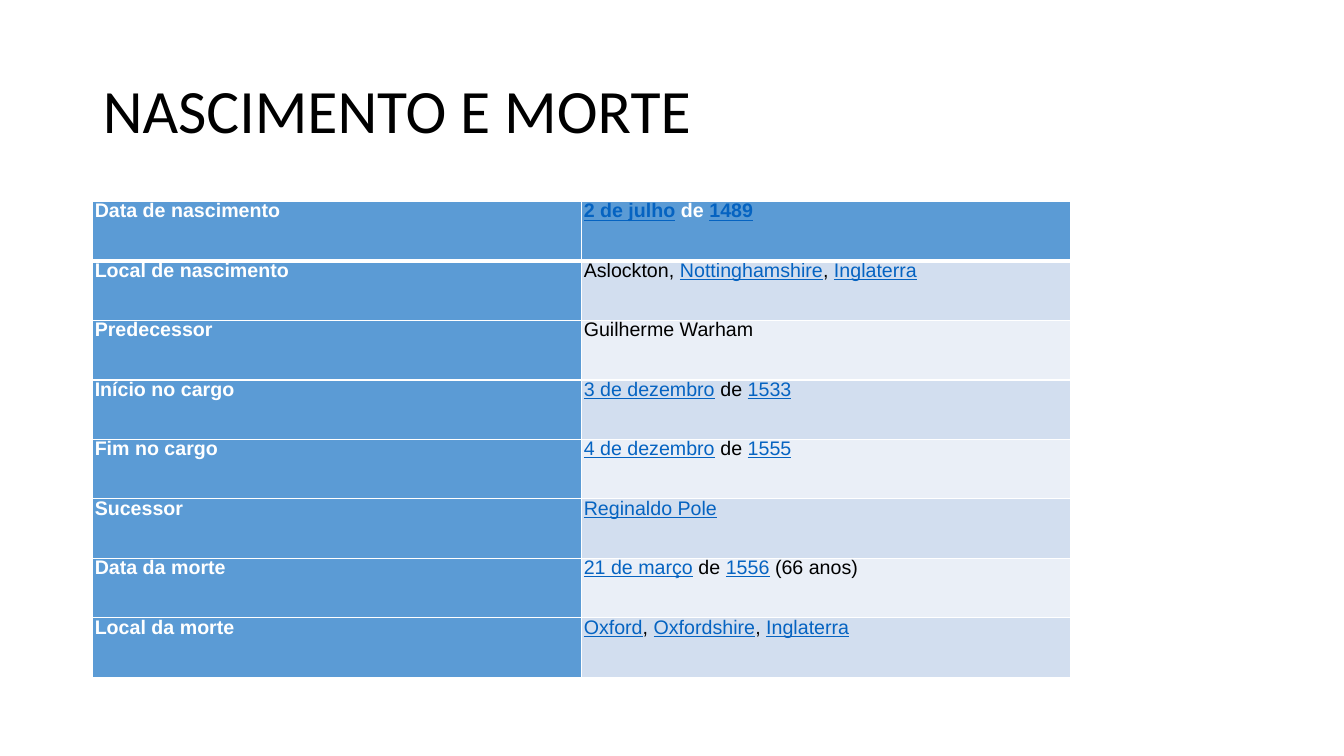
from lxml import etree
from pptx import Presentation
from pptx.dml.color import RGBColor
from pptx.enum.text import MSO_ANCHOR, PP_ALIGN
from pptx.oxml.ns import qn
from pptx.util import Inches, Pt

WHITE = RGBColor(0xFF, 0xFF, 0xFF)
BLACK = RGBColor(0x00, 0x00, 0x00)
BLUE = RGBColor(0x5B, 0x9B, 0xD5)
LINK_BLUE = RGBColor(0x05, 0x63, 0xC1)
BANDS = (RGBColor(0xEA, 0xEF, 0xF7), RGBColor(0xD2, 0xDE, 0xEF))

SLIDE_WIDTH, SLIDE_HEIGHT = Inches(13.33), Inches(7.5)
MARGIN = Inches(0.92)
CELL_INSET = Inches(0.02)

# Label and value of each row; text between bars is underlined in link blue
FACTS = [
    ("Data de nascimento", "|2 de julho| de |1489|"),
    ("Local de nascimento", "Aslockton, |Nottinghamshire|, |Inglaterra|"),
    ("Predecessor", "Guilherme Warham"),
    ("Início no cargo", "|3 de dezembro| de |1533|"),
    ("Fim no cargo", "|4 de dezembro| de |1555|"),
    ("Sucessor", "|Reginaldo Pole|"),
    ("Data da morte", "|21 de março| de |1556| (66 anos)"),
    ("Local da morte", "|Oxford|, |Oxfordshire|, |Inglaterra|"),
]


def add_run(paragraph, text, font_name, size, color, bold=False, underline=False):
    run = paragraph.add_run()
    run.text = text
    font = run.font
    font.name, font.size, font.bold = font_name, Pt(size), bold
    font.underline = underline
    font.color.rgb = color


def add_title(slide, text, left, top, width, height):
    title = slide.shapes.title
    title.left, title.top, title.width, title.height = left, top, width, height
    frame = title.text_frame
    frame.vertical_anchor = MSO_ANCHOR.MIDDLE
    paragraph = frame.paragraphs[0]
    paragraph.alignment = PP_ALIGN.LEFT
    paragraph.line_spacing = 0.9
    add_run(paragraph, text, "Calibri", 44, BLACK)


def set_borders(cell, row):
    """White rules, with a thick one under the first row."""
    properties = cell._tc.get_or_add_tcPr()
    weights = {"L": 1, "R": 1, "T": 3 if row == 1 else 1, "B": 3 if row == 0 else 1}
    for position, (side, weight) in enumerate(weights.items()):
        line = etree.Element(qn(f"a:ln{side}"), w=str(Pt(weight)))
        fill = etree.SubElement(line, qn("a:solidFill"))
        etree.SubElement(fill, qn("a:srgbClr"), val=str(WHITE))
        properties.insert(position, line)


def fill_cell(cell, text, row, is_heading):
    cell.margin_left = cell.margin_right = CELL_INSET
    cell.margin_top = cell.margin_bottom = CELL_INSET
    cell.fill.solid()
    cell.fill.fore_color.rgb = BLUE if is_heading else BANDS[row % 2]
    set_borders(cell, row)
    paragraph = cell.text_frame.paragraphs[0]
    paragraph.line_spacing = Pt(13.2)
    paragraph.space_after = Pt(6)
    plain_color = WHITE if is_heading else BLACK
    for index, part in enumerate(text.split("|")):
        if part:
            linked = index % 2 == 1
            add_run(paragraph, part, "Arial", 14,
                    LINK_BLUE if linked else plain_color, is_heading, linked)


def add_facts_table(slide, facts, left, top, width, height):
    table = slide.shapes.add_table(len(facts), 2, left, top, width, height).table
    table.first_col = True
    for row, texts in enumerate(facts):
        for column, text in enumerate(texts):
            fill_cell(table.cell(row, column), text, row, row == 0 or column == 0)


def main():
    presentation = Presentation()
    presentation.slide_width, presentation.slide_height = SLIDE_WIDTH, SLIDE_HEIGHT
    slide = presentation.slides.add_slide(presentation.slide_layouts[5])
    add_title(slide, "NASCIMENTO E MORTE", MARGIN, Inches(0.4),
              SLIDE_WIDTH - 2 * MARGIN, Inches(1.45))
    add_facts_table(slide, FACTS, MARGIN, Inches(2), Inches(9.7), Inches(4.72))
    presentation.save("out.pptx")


if __name__ == "__main__":
    main()
